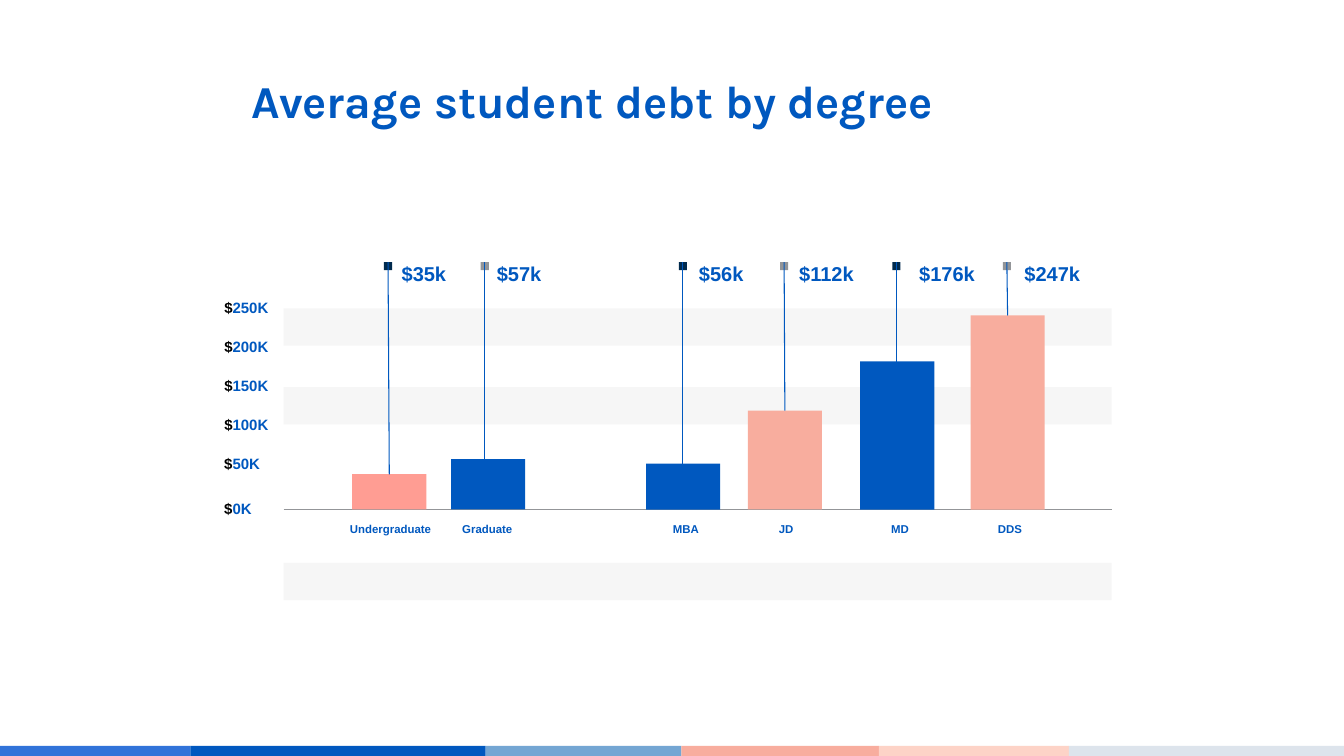
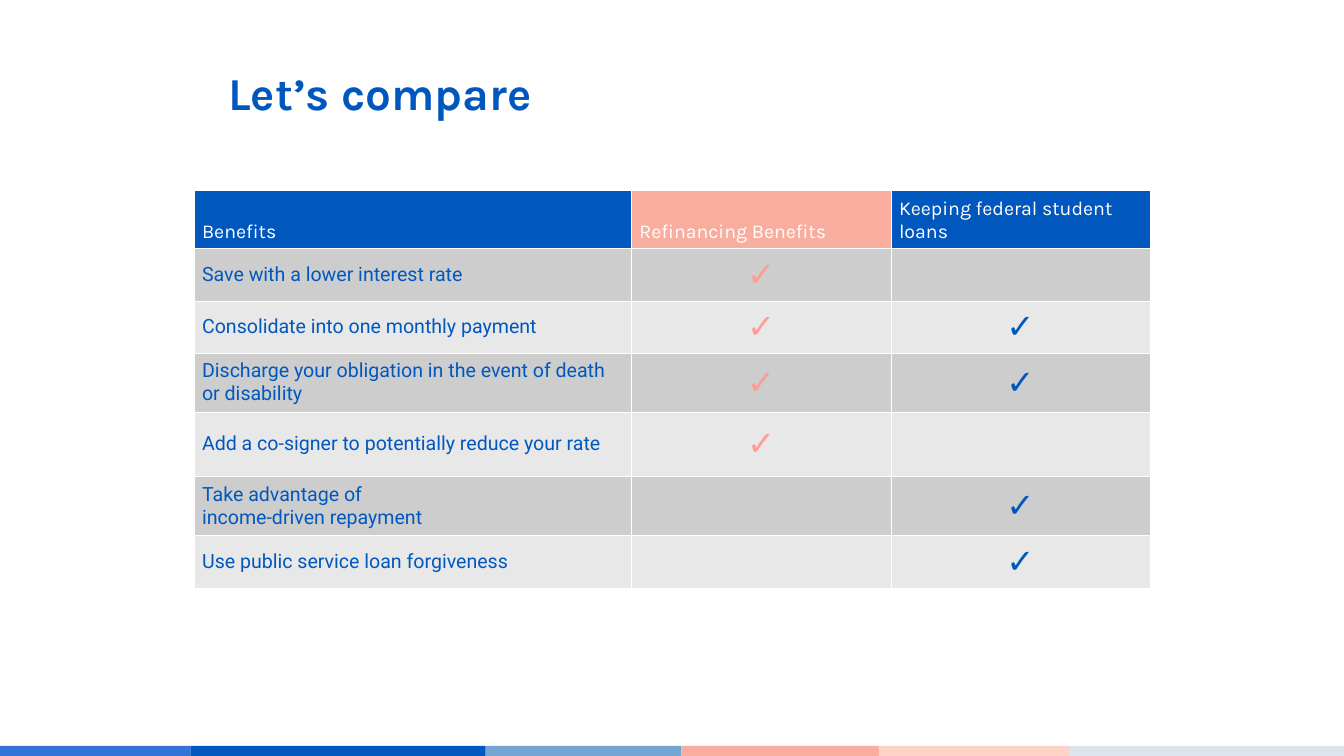
import pptx
import pptx.util
import pptx.dml.color
import pptx.enum.shapes
import pptx.enum.text
import pptx.oxml
import pptx.oxml.ns
from pptx.util import Inches

Pt = pptx.util.Pt
ALIGN = pptx.enum.text.PP_ALIGN
ANCHOR = pptx.enum.text.MSO_ANCHOR
GROW = pptx.enum.text.MSO_AUTO_SIZE.SHAPE_TO_FIT_TEXT
RECT = pptx.enum.shapes.MSO_SHAPE.RECTANGLE
STRAIGHT = pptx.enum.shapes.MSO_CONNECTOR.STRAIGHT

# ---- Content ----
COLORS = {
    "blue": "0058BF", "bright": "3173D9", "sky": "74A6D3", "coral": "F8AD9E",
    "blush": "FDD3C7", "mist": "DDE4EC", "salmon": "FF9D93", "navy": "002A4D",
    "gray": "939598", "band": "F6F6F6", "row_dark": "CDCDCD",
    "row_light": "E8E8E8", "black": "000000", "white": "FFFFFF",
}
FOOTER_STRIPES = [("bright", 0), ("blue", 3.78), ("sky", 9.64),
                  ("coral", 13.52), ("blush", 17.44), ("mist", 21.21)]

DEBT_TITLE = "Average student debt by degree"
DEBT_TICKS = [("250K", 5.92), ("200K", 6.7), ("150K", 7.47),
              ("100K", 8.25), ("50K", 9.02), ("0K", 9.91)]
# degree, label centre, label width, debt, debt left, bar left, bar height, bar colour, marker centre
DEGREES = [
    ("Undergraduate", 7.75, 1.63, "$35k", 7.97, 6.99, 0.7, "salmon", 7.7),
    ("Graduate", 9.67, 1.01, "$57k", 9.86, 8.95, 1.0, "blue", 9.62),
    ("MBA", 13.61, 0.52, "$56k", 13.87, 12.82, 0.91, "blue", 13.55),
    ("JD", 15.6, 0.29, "$112k", 15.86, 14.84, 1.96, "coral", 15.56),
    ("MD", 17.86, 0.36, "$176k", 18.24, 17.07, 2.94, "blue", 17.79),
    ("DDS", 20.04, 0.48, "$247k", 20.33, 19.26, 3.85, "coral", 19.98),
]

COMPARE_TITLE = "Let’s compare"
COMPARE_HEADER = [("Benefits", "blue"), ("Refinancing Benefits", "coral"),
                  ("Keeping federal student loans", "blue")]
# benefit, offered by refinancing, offered by federal loans
BENEFITS = [
    ("Save with a lower interest rate", True, False),
    ("Consolidate into one monthly payment", True, True),
    ("Discharge your obligation in the event of death or disability", True, True),
    ("Add a co-signer to potentially reduce your rate", True, False),
    ("Take advantage of\nincome-driven repayment", False, True),
    ("Use public service loan forgiveness", False, True),
]
CHECK = "✓"

# ---- Formats ----
TITLE = {"name": "Karla", "size": Pt(65.3), "bold": True}
DEGREE_LABEL = {"name": "Arial", "size": Pt(16.3), "bold": True}
TICK_LABEL = {"name": "Arial", "size": Pt(21.4), "bold": True}
DEBT_LABEL = {"name": "Arial", "size": Pt(28.6), "bold": True}
HEADER_TEXT = {"name": "Karla", "size": Pt(28), "bold": False}
BENEFIT_TEXT = {"name": "Roboto", "size": Pt(28), "bold": False}
CHECK_TEXT = {"name": "Roboto", "size": Pt(48), "bold": False}
TIGHT = {"margin_left": 0, "margin_right": 0, "margin_top": 0,
         "margin_bottom": 0, "auto_size": GROW}
CELL = {"margin_left": Inches(0.16), "margin_right": Inches(0.16),
        "margin_top": Inches(0.1), "margin_bottom": Inches(0.1)}

# ---- Layout in inches ----
SLIDE_W, SLIDE_H, FOOTER_TOP = 26.67, 15, 14.8
PLOT_LEFT, PLOT_W, AXIS_Y = 5.63, 16.43, 10.11
BAND_TOPS, BAND_H = (6.12, 7.68, 11.17), 0.74
BAR_W, BAR_FOOT = 1.47, 10.11
MARKER_TOP, MARKER = 5.2, 0.16
BLUE_STEM_FOOT = 9.2
COLUMN_WIDTHS = (8.68, 5.15, 5.14)
ROW_HEIGHTS = (1.15, 1.04, 1.04, 1.17, 1.27, 1.18, 1.04)


def rgb(color):
    return pptx.dml.color.RGBColor.from_string(COLORS[color])


def apply(target, values):
    for attribute, value in values.items():
        setattr(target, attribute, value)


def add_block(shapes, left, top, width, height, color):
    block = shapes.add_shape(RECT, Inches(left), Inches(top), Inches(width), Inches(height))
    block.shadow.inherit = False
    block.fill.solid()
    block.fill.fore_color.rgb = rgb(color)
    block.line.fill.background()


def add_line(slide, start, end, color):
    line = slide.shapes.add_connector(STRAIGHT, *map(Inches, start + end))
    line.line.color.rgb = rgb(color)
    line.line.width = Pt(1.5)
    line._element.spPr.append(pptx.oxml.parse_xml(
        f"<a:effectLst {pptx.oxml.ns.nsdecls('a')}/>"))


def add_text(slide, left, top, width, height, runs, font, frame_format, align=None):
    """Add one paragraph of (text, colour) runs."""
    box = slide.shapes.add_textbox(Inches(left), Inches(top), Inches(width), Inches(height))
    apply(box.text_frame, frame_format)
    paragraph = box.text_frame.paragraphs[0]
    paragraph.alignment = align
    for text, color in runs:
        run = paragraph.add_run()
        run.text = text
        apply(run.font, font)
        run.font.color.rgb = rgb(color)
    return paragraph


def add_footer(layout, slide):
    """Draw the stripes on a slide and move them to the shared layout."""
    for placeholder in list(layout.placeholders):
        placeholder._element.getparent().remove(placeholder._element)
    stripes = slide.shapes.add_group_shape()
    ends = [left for _, left in FOOTER_STRIPES[1:]] + [SLIDE_W]
    for (color, left), end in zip(FOOTER_STRIPES, ends):
        add_block(stripes.shapes, left, FOOTER_TOP, end - left, SLIDE_H - FOOTER_TOP, color)
    layout.shapes._spTree.append(stripes._element)


def build_debt(slide):
    label_format = {**TIGHT, "word_wrap": False}

    # Axis, bands and scale
    add_line(slide, (PLOT_LEFT, AXIS_Y), (PLOT_LEFT + PLOT_W, AXIS_Y), "gray")
    for top in BAND_TOPS:
        add_block(slide.shapes, PLOT_LEFT, top, PLOT_W, BAND_H, "band")
    for amount, top in DEBT_TICKS:
        add_text(slide, 4.45, top, 0.23 + 0.165 * len(amount), 0.36,
                 [("$", "black"), (amount, "blue")], TICK_LABEL, label_format)

    # Bars with their labels
    for degree, center, width, debt, debt_left, bar_left, bar_h, color, _ in DEGREES:
        add_text(slide, center - width / 2, 10.36, width, 0.27, [(degree, "blue")],
                 DEGREE_LABEL, label_format, ALIGN.CENTER)
        add_block(slide.shapes, bar_left, BAR_FOOT - bar_h, BAR_W, bar_h, color)
        add_text(slide, debt_left, 5.19, 0.03 + 0.22 * len(debt), 0.48, [(debt, "blue")],
                 DEBT_LABEL, label_format)

    # Markers and stems
    for index, (*_, bar_left, bar_h, color, marker_x) in enumerate(DEGREES):
        add_block(slide.shapes, marker_x - MARKER / 2, MARKER_TOP, MARKER, MARKER,
                  ("navy", "gray")[index % 2])
        if color == "blue":
            foot = (marker_x, BLUE_STEM_FOOT)
        else:
            foot = (bar_left + BAR_W / 2, BAR_FOOT - bar_h)
        add_line(slide, foot, (marker_x, MARKER_TOP), "blue")

    title = add_text(slide, 4.89, 1.52, 17.33, 1.89, [(DEBT_TITLE, "blue")],
                     TITLE, {"word_wrap": True})
    title.line_spacing = 0.9


def fill_cell(cell, text, font, color, fill, anchor, align=None):
    apply(cell, {**CELL, "vertical_anchor": anchor})
    properties = cell._tc.get_or_add_tcPr()
    for side in "LRTB":
        properties.append(pptx.oxml.parse_xml(
            f'<a:ln{side} {pptx.oxml.ns.nsdecls("a")} w="{Pt(1)}"><a:solidFill>'
            f'<a:srgbClr val="{COLORS["white"]}"/></a:solidFill></a:ln{side}>'))
    cell.fill.solid()
    cell.fill.fore_color.rgb = rgb(fill)
    if not text:
        return
    cell.text = text
    for paragraph in cell.text_frame.paragraphs:
        paragraph.alignment = align
        for run in paragraph.runs:
            apply(run.font, font)
            run.font.color.rgb = rgb(color)


def build_compare(slide):
    add_text(slide, 4.53, 1.28, 18.33, 1.1, [(COMPARE_TITLE, "blue")],
             TITLE, {**TIGHT, "word_wrap": True})
    table = slide.shapes.add_table(
        len(ROW_HEIGHTS), len(COLUMN_WIDTHS), Inches(3.85), Inches(3.78),
        Inches(sum(COLUMN_WIDTHS)), Inches(sum(ROW_HEIGHTS))).table
    apply(table, {"first_row": False, "horz_banding": False})
    for column, width in zip(table.columns, COLUMN_WIDTHS):
        column.width = Inches(width)
    for row, height in zip(table.rows, ROW_HEIGHTS):
        row.height = Inches(height)

    # Header row
    for column, (heading, fill) in enumerate(COMPARE_HEADER):
        fill_cell(table.cell(0, column), heading, HEADER_TEXT, "white", fill,
                  ANCHOR.BOTTOM)

    # Benefit rows
    for row, (benefit, *offers) in enumerate(BENEFITS, start=1):
        fill = "row_dark" if row % 2 else "row_light"
        fill_cell(table.cell(row, 0), benefit, BENEFIT_TEXT, "blue", fill, ANCHOR.MIDDLE)
        for column, (offered, color) in enumerate(zip(offers, ("salmon", "blue")), start=1):
            fill_cell(table.cell(row, column), CHECK if offered else "", CHECK_TEXT,
                      color, fill, ANCHOR.MIDDLE, ALIGN.CENTER)


def main():
    deck = pptx.Presentation()
    apply(deck, {"slide_width": Inches(SLIDE_W), "slide_height": Inches(SLIDE_H)})
    blank = deck.slide_layouts[6]
    debt, compare = (deck.slides.add_slide(blank) for _ in range(2))
    add_footer(blank, debt)
    build_debt(debt)
    build_compare(compare)
    deck.save("out.pptx")


if __name__ == "__main__":
    main()
